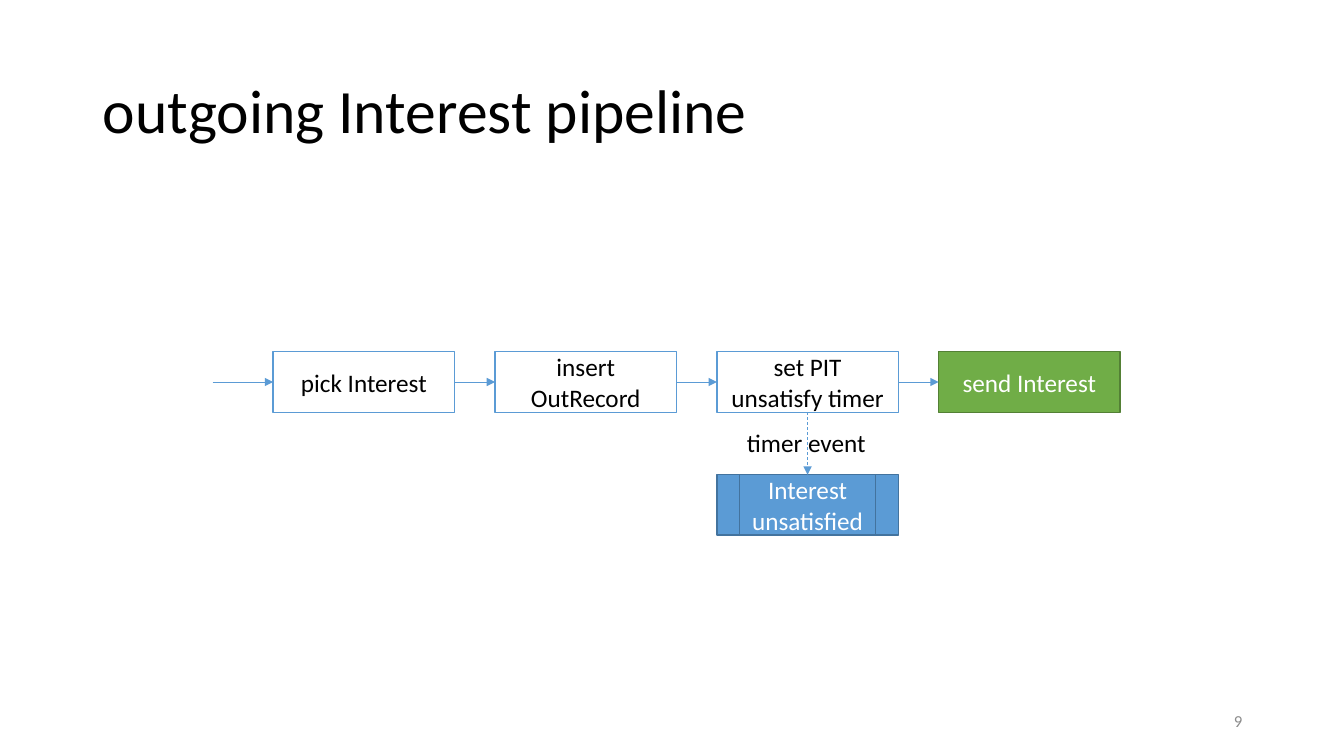
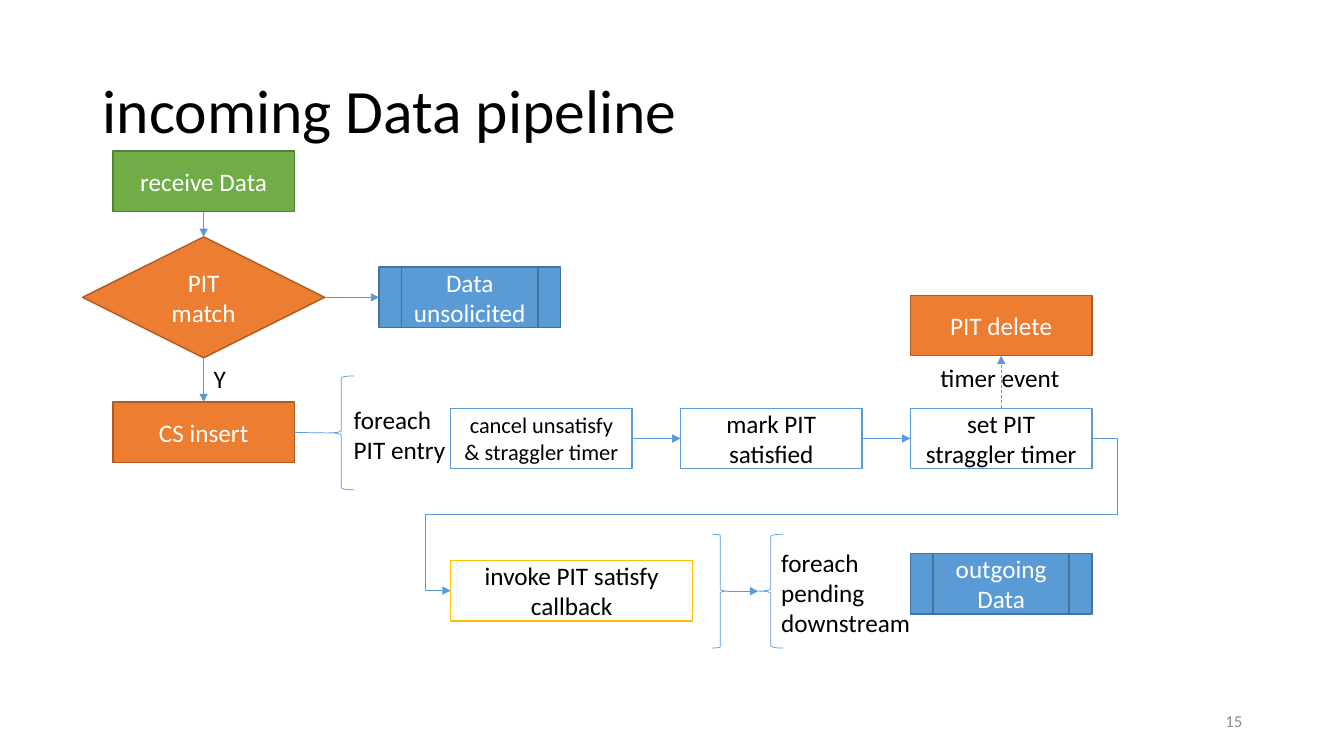
"""Build two flowchart slides that describe packet forwarding pipelines."""
from dataclasses import dataclass
from typing import NamedTuple

from lxml import etree
from pptx import Presentation
from pptx import util as u
from pptx.dml.color import RGBColor
from pptx.enum import dml, shapes, text
from pptx.oxml import ns

FONT = "Calibri"
BLACK, WHITE, GREY, BLUE = "000000", "FFFFFF", "8C8C8C", "5B9BD5"
BOX_WIDTH, BOX_HEIGHT = 1.8, 0.6
BRACE_HEIGHT = 1.13
TOP, LEFT, BOTTOM, RIGHT = range(4)
RECT = shapes.MSO_SHAPE.RECTANGLE
PROCESS = shapes.MSO_SHAPE.FLOWCHART_PREDEFINED_PROCESS
DECISION = shapes.MSO_SHAPE.FLOWCHART_DECISION
LEFT_BRACE = shapes.MSO_SHAPE.LEFT_BRACE
RIGHT_BRACE = shapes.MSO_SHAPE.RIGHT_BRACE


class Style(NamedTuple):
    fill: str | None
    line: str
    ink: str = WHITE
    geometry: shapes.MSO_SHAPE = RECT
    weight: float = 1


STEP = Style(WHITE, BLUE, BLACK)
CALLBACK = Style(WHITE, "FFC000", BLACK)
ENDPOINT = Style("70AD47", "538035")
TABLE = Style("ED7D31", "AF5C24")
CHOICE = TABLE._replace(geometry=DECISION)
PIPELINE = Style(BLUE, "43739E", geometry=PROCESS)
OPENING = Style(None, BLUE, geometry=LEFT_BRACE, weight=0.5)
CLOSING = OPENING._replace(geometry=RIGHT_BRACE)


@dataclass
class Node:
    name: str
    words: str
    style: Style
    left: float
    top: float
    width: float = BOX_WIDTH
    height: float = BOX_HEIGHT
    size: float = 18


class Side(NamedTuple):
    node: str
    site: int


class Point(NamedTuple):
    x: float
    y: float


@dataclass
class Link:
    start: Side | Point
    end: Side
    dashed: bool = False
    arrow: bool = True
    bends: tuple[float, ...] = ()


class Label(NamedTuple):
    words: str
    left: float
    top: float
    width: float
    height: float = 0.4


@dataclass
class Flow:
    title: str
    number: int
    nodes: list[Node]
    links: list[Link]
    labels: list[Label]


def colour(value: str) -> RGBColor:
    """Turn a hex string into a colour."""
    return RGBColor.from_string(value)


def write(shape, words: str, size: float, ink: str,
          align=text.PP_ALIGN.LEFT, spacing: float = 1.0) -> None:
    """Write one paragraph for each line of the words."""
    frame = shape.text_frame
    for index, line in enumerate(words.split("\n")):
        para = frame.add_paragraph() if index else frame.paragraphs[0]
        para.alignment = align
        para.line_spacing = spacing
        span = para.add_run()
        span.text = line
        span.font.name = FONT
        span.font.size = u.Pt(size)
        span.font.color.rgb = colour(ink)


def add_text(page, label: Label, wrap: bool = False):
    """Add an empty text box at the place of a label."""
    box = page.shapes.add_textbox(*map(u.Inches, label[1:]))
    box.text_frame.word_wrap = wrap
    if wrap:
        box.text_frame.vertical_anchor = text.MSO_ANCHOR.MIDDLE
    else:
        box.text_frame.auto_size = text.MSO_AUTO_SIZE.SHAPE_TO_FIT_TEXT
    return box


def add_node(page, node: Node):
    """Draw a box or a brace of the flow."""
    style = node.style
    frame = map(u.Inches, (node.left, node.top, node.width, node.height))
    box = page.shapes.add_shape(style.geometry, *frame)
    box.shadow.inherit = False
    if style.fill:
        box.fill.solid()
        box.fill.fore_color.rgb = colour(style.fill)
    else:
        box.fill.background()
    box.line.color.rgb = colour(style.line)
    box.line.width = u.Pt(style.weight)
    if node.words:
        box.text_frame.word_wrap = True
        box.text_frame.vertical_anchor = text.MSO_ANCHOR.MIDDLE
        write(box, node.words, node.size, style.ink, text.PP_ALIGN.CENTER)
    return box


def place(end: Side | Point, nodes: dict[str, Node]) -> Point:
    """Find the point where a link ends."""
    if isinstance(end, Point):
        return end
    node = nodes[end.node]
    across, down = {TOP: (0.5, 0), LEFT: (0, 0.5), BOTTOM: (0.5, 1), RIGHT: (1, 0.5)}[end.site]
    return Point(node.left + across * node.width, node.top + down * node.height)


def bend(connector, bends: tuple[float, ...]) -> None:
    """Give an elbow connector five segments with the given bends."""
    geometry = connector._element.spPr.find(ns.qn("a:prstGeom"))
    geometry.set("prst", "bentConnector5")
    values = geometry.find(ns.qn("a:avLst"))
    if values is None:
        values = etree.SubElement(geometry, ns.qn("a:avLst"))
    for index, share in enumerate(bends, 1):
        etree.SubElement(values, ns.qn("a:gd"), name=f"adj{index}",
                         fmla=f"val {round(share * 100000)}")


def add_link(page, link: Link, nodes: dict[str, Node], drawn: dict) -> None:
    """Draw a connector and join it to its boxes."""
    kind = shapes.MSO_CONNECTOR.ELBOW if link.bends else shapes.MSO_CONNECTOR.STRAIGHT
    points = (*place(link.start, nodes), *place(link.end, nodes))
    connector = page.shapes.add_connector(kind, *map(u.Inches, points))
    if isinstance(link.start, Side):
        connector.begin_connect(drawn[link.start.node], link.start.site)
    connector.end_connect(drawn[link.end.node], link.end.site)
    connector.line.color.rgb = colour(BLUE)
    connector.line.width = u.Pt(0.5)
    if link.dashed:
        connector.line.dash_style = dml.MSO_LINE.DASH
    if link.arrow:
        etree.SubElement(connector.line._get_or_add_ln(), ns.qn("a:tailEnd"), type="triangle")
    if link.bends:
        bend(connector, link.bends)
    etree.SubElement(connector._element.spPr, ns.qn("a:effectLst"))


def add_flow(deck, flow: Flow) -> None:
    """Add a slide with its title, number and flowchart."""
    page = deck.slides.add_slide(deck.slide_layouts[6])
    title = Label(flow.title, 0.92, 0.4, 11.5, 1.45)
    write(add_text(page, title, True), title.words, 44, BLACK, spacing=0.9)
    number = Label(str(flow.number), 9.42, 6.95, 3)
    write(add_text(page, number, True), number.words, 12, GREY, text.PP_ALIGN.RIGHT)
    nodes = {node.name: node for node in flow.nodes}
    drawn = {node.name: add_node(page, node) for node in flow.nodes}
    for link in flow.links:
        add_link(page, link, nodes, drawn)
    for label in flow.labels:
        write(add_text(page, label), label.words, 18, BLACK)


def outgoing_interest() -> Flow:
    """Describe the outgoing Interest pipeline."""
    steps = [("pick", "pick Interest", STEP), ("insert", "insert OutRecord", STEP),
             ("timer", "set PIT unsatisfy timer", STEP), ("send", "send Interest", ENDPOINT)]
    nodes = [Node(*step, 2.71 + 2.2 * column, 3.49) for column, step in enumerate(steps)]
    links = [Link(Side(before.name, RIGHT), Side(after.name, LEFT))
             for before, after in zip(nodes, nodes[1:])]
    nodes.append(Node("unsatisfied", "Interest unsatisfied", PIPELINE, 7.11, 4.71))
    links += [Link(Point(2.11, 3.79), Side("pick", LEFT)),
              Link(Side("timer", BOTTOM), Side("unsatisfied", TOP), dashed=True)]
    return Flow("outgoing Interest pipeline", 9, nodes, links,
                [Label("timer event", 7.31, 4.19, 1.4)])


def incoming_data() -> Flow:
    """Describe the incoming Data pipeline."""
    first, second, third = (4.47 + 2.28 * column for column in range(3))
    row, brace_top = 4.05, 5.3
    nodes = [
        Node("receive", "receive Data", ENDPOINT, 1.12, 1.5),
        Node("match", "PIT match", CHOICE, 0.82, 2.35, 2.4, 1.2),
        Node("unsolicited", "Data unsolicited", PIPELINE, 3.76, 2.65),
        Node("store", "CS insert", TABLE, 1.12, 3.99),
        Node("entries", "", OPENING, 3.26, 3.73, 0.25, BRACE_HEIGHT),
        Node("cancel", "cancel unsatisfy & straggler timer", STEP, first, row, size=16),
        Node("mark", "mark PIT satisfied", STEP, second, row),
        Node("timer", "set PIT straggler timer", STEP, third, row),
        Node("delete", "PIT delete", TABLE, third, 2.93),
        Node("callback", "invoke PIT satisfy callback", CALLBACK, first, 5.56, 2.4),
        Node("entries end", "", CLOSING, 7.06, brace_top, 0.17, BRACE_HEIGHT),
        Node("downstreams", "", OPENING, 7.52, brace_top, 0.25, BRACE_HEIGHT),
        Node("outgoing", "outgoing Data", PIPELINE, third, 5.49),
    ]
    links = [
        Link(Side("receive", BOTTOM), Side("match", TOP)),
        Link(Side("match", RIGHT), Side("unsolicited", LEFT)),
        Link(Side("match", BOTTOM), Side("store", TOP)),
        Link(Side("store", RIGHT), Side("entries", LEFT), arrow=False),
        Link(Side("cancel", RIGHT), Side("mark", LEFT)),
        Link(Side("mark", RIGHT), Side("timer", LEFT)),
        Link(Side("timer", TOP), Side("delete", BOTTOM), dashed=True),
        Link(Side("timer", RIGHT), Side("callback", LEFT), bends=(-0.04, 0.5, 1.04)),
        Link(Point(7.23, brace_top + BRACE_HEIGHT / 2), Side("downstreams", LEFT)),
    ]
    labels = [
        Label("Y", 2.02, 3.56, 0.32),
        Label("timer event", 9.23, 3.55, 1.4),
        Label("foreach\nPIT entry", 3.41, 3.96, 1.12, 0.71),
        Label("foreach\npending\ndownstream", 7.65, 5.38, 1.49, 1.01),
    ]
    return Flow("incoming Data pipeline", 15, nodes, links, labels)


def main() -> None:
    """Build and save the deck."""
    deck = Presentation()
    deck.slide_width, deck.slide_height = u.Inches(13.33), u.Inches(7.5)
    for flow in (outgoing_interest(), incoming_data()):
        add_flow(deck, flow)
    deck.save("out.pptx")


if __name__ == "__main__":
    main()
